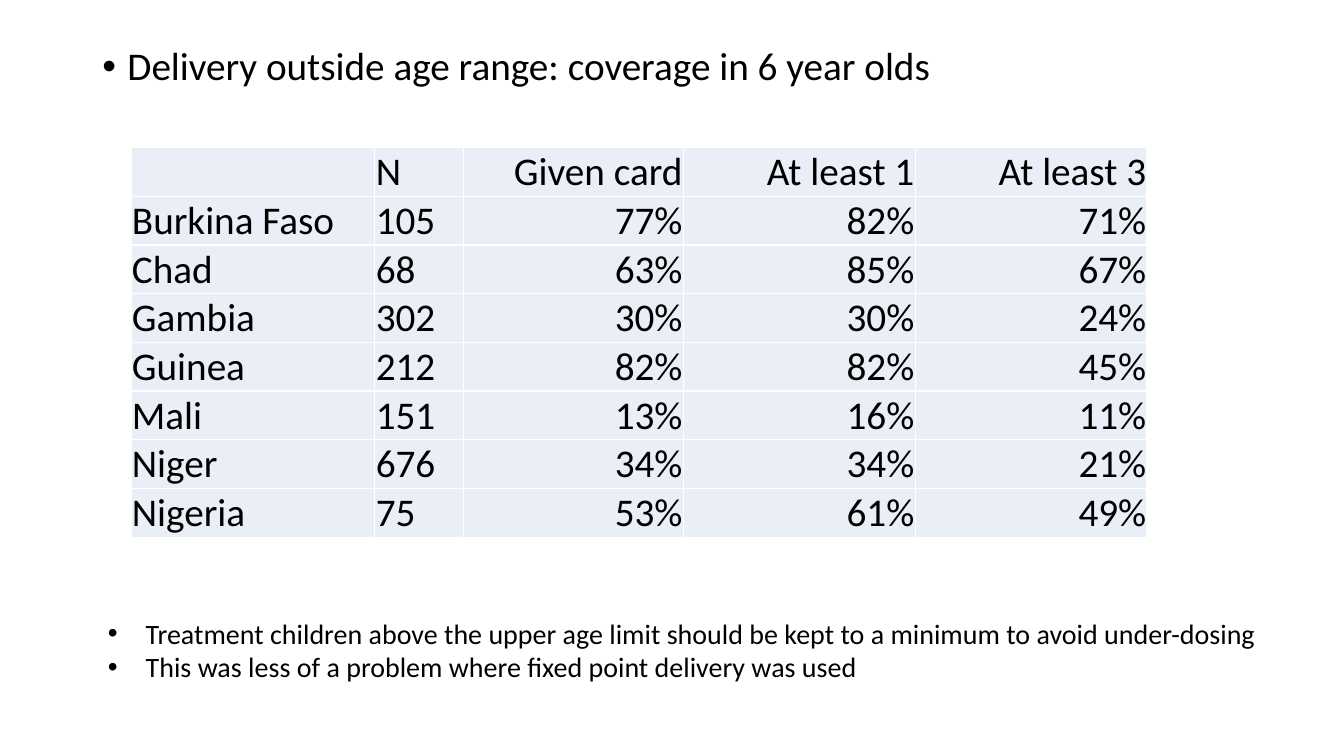
import pptx
import pptx.dml.color
import pptx.enum.text
import pptx.oxml
import pptx.oxml.ns
import pptx.util
from lxml import etree

Pt = pptx.util.Pt
FONT = "Calibri"
COLORS = {"text": "000000", "cell": "EAEFF7", "border": "FFFFFF"}
COLUMN_WIDTHS = [174.2, 63.4, 157, 165.6, 165.6]
ROW_HEIGHT = 34.8
COVERAGE = [
    ["", "N", "Given card", "At least 1", "At least 3"],
    ["Burkina Faso", "105", "77%", "82%", "71%"],
    ["Chad", "68", "63%", "85%", "67%"],
    ["Gambia", "302", "30%", "30%", "24%"],
    ["Guinea", "212", "82%", "82%", "45%"],
    ["Mali", "151", "13%", "16%", "11%"],
    ["Niger", "676", "34%", "34%", "21%"],
    ["Nigeria", "75", "53%", "61%", "49%"],
]


def rgb(name):
    return pptx.dml.color.RGBColor.from_string(COLORS[name])


def add_run(p, text, size):
    r = p.add_run()
    r.text = text
    r.font.name = FONT
    r.font.size = Pt(size)
    r.font.color.rgb = rgb("text")


def add_bullets(s, left, top, width, height, lines, size, indent, spacing=1.0):
    tf = s.shapes.add_textbox(Pt(left), Pt(top), Pt(width), Pt(height)).text_frame
    tf.word_wrap = True
    for i, line in enumerate(lines):
        p = tf.add_paragraph() if i else tf.paragraphs[0]
        p.line_spacing = spacing
        pPr = p._p.get_or_add_pPr()
        pPr.set("marL", str(Pt(indent)))
        pPr.set("indent", str(-Pt(indent)))
        font = etree.SubElement(pPr, pptx.oxml.ns.qn("a:buFont"))
        font.set("typeface", "Arial")
        bullet = etree.SubElement(pPr, pptx.oxml.ns.qn("a:buChar"))
        bullet.set("char", "•")
        add_run(p, line, size)


def add_borders(cell, width):
    tcPr = cell._tc.get_or_add_tcPr()
    for side in ("lnL", "lnR", "lnT", "lnB"):
        tcPr.append(pptx.oxml.parse_xml(
            f'<a:{side} {pptx.oxml.ns.nsdecls("a")} w="{Pt(width)}"><a:solidFill>'
            f'<a:srgbClr val="{COLORS["border"]}"/></a:solidFill></a:{side}>'))


def fill_cell(cell, text, align):
    add_borders(cell, 1)
    cell.fill.solid()
    cell.fill.fore_color.rgb = rgb("cell")
    cell.margin_left = cell.margin_right = cell.margin_top = Pt(0.7)
    cell.margin_bottom = Pt(0)
    cell.vertical_anchor = pptx.enum.text.MSO_ANCHOR.BOTTOM
    if text:
        p = cell.text_frame.paragraphs[0]
        p.alignment = align
        add_run(p, text, 28)


def add_coverage_table(s, left, top):
    table = s.shapes.add_table(
        len(COVERAGE), len(COLUMN_WIDTHS), Pt(left), Pt(top),
        Pt(sum(COLUMN_WIDTHS)), Pt(ROW_HEIGHT * len(COVERAGE))).table
    table.first_row = table.horz_banding = False
    for column, width in zip(table.columns, COLUMN_WIDTHS):
        column.width = Pt(width)
    for i, values in enumerate(COVERAGE):
        table.rows[i].height = Pt(ROW_HEIGHT)
        for j, value in enumerate(values):
            align = pptx.enum.text.PP_ALIGN.LEFT if j < 2 else pptx.enum.text.PP_ALIGN.RIGHT
            fill_cell(table.cell(i, j), value, align)


def main():
    prs = pptx.Presentation()
    prs.slide_width, prs.slide_height = Pt(960), Pt(540)
    s = prs.slides.add_slide(prs.slide_layouts[6])
    add_bullets(s, 66, 30, 828, 456.5,
                ["Delivery outside age range: coverage in 6 year olds"], 28, 18, 0.9)
    add_coverage_table(s, 93.6, 105.4)
    add_bullets(s, 70, 436.5, 880, 55.5, [
        "Treatment children above the upper age limit should be kept to a minimum to avoid under-dosing",
        "This was less of a problem where fixed point delivery was used",
    ], 20, 27)
    prs.save("out.pptx")


if __name__ == "__main__":
    main()
